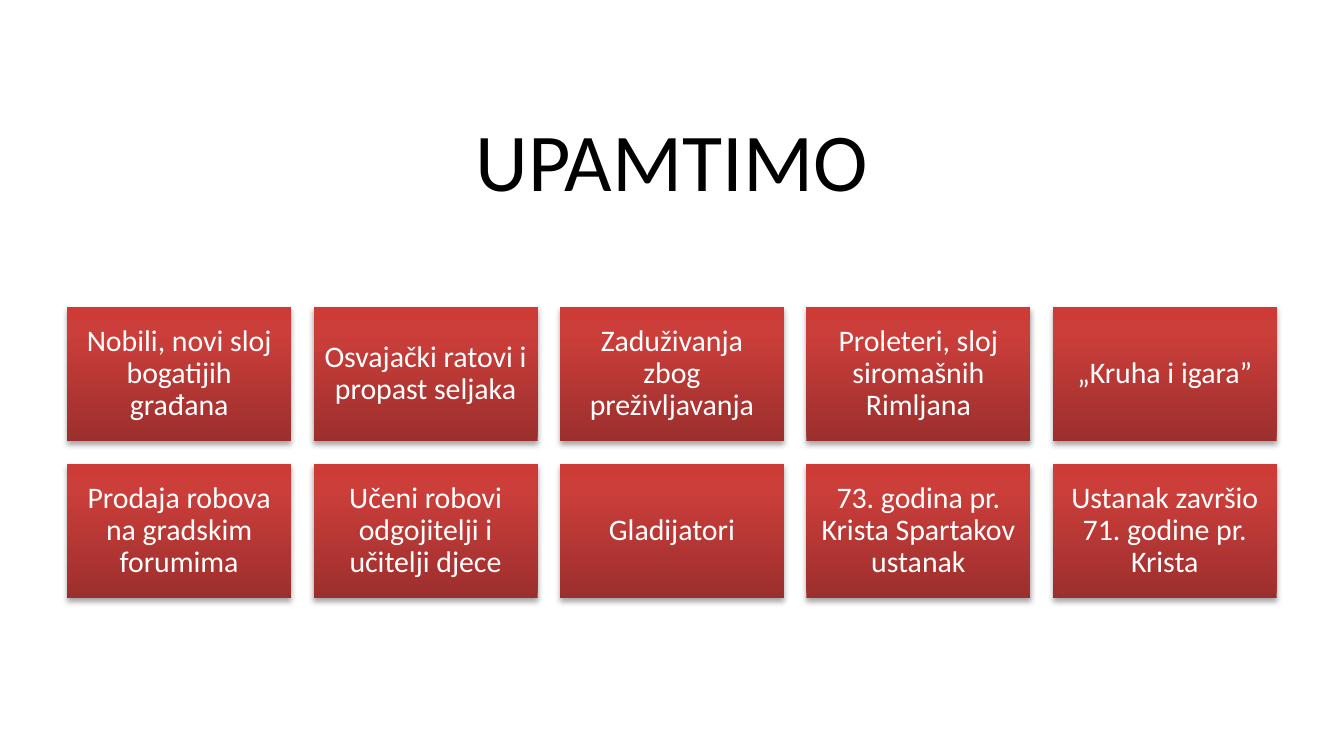
from copy import deepcopy

from lxml import etree
from pptx import Presentation
from pptx.dml.color import RGBColor
from pptx.enum import shapes, text
from pptx.oxml import ns
from pptx.util import Pt

BLACK = RGBColor(0x00, 0x00, 0x00)
WHITE = RGBColor(0xFF, 0xFF, 0xFF)
DARK_RED = RGBColor(0x9C, 0x2F, 0x2D)
RED = RGBColor(0xCB, 0x3E, 0x3A)
BRIGHT_RED = RGBColor(0xCE, 0x3B, 0x37)
CARD_GRADIENT = [(0, DARK_RED), (0.8, RED), (1, BRIGHT_RED)]

FONT = "Calibri"
LEFT, TOP = 36, 164.4
CARD_WIDTH, CARD_HEIGHT, GAP = 120, 72, 12
COLUMNS = 5

FACTS = [
    "Nobili, novi sloj bogatijih građana",
    "Osvajački ratovi i propast seljaka",
    "Zaduživanja zbog preživljavanja",
    "Proleteri, sloj siromašnih Rimljana",
    "„Kruha i igara”",
    "Prodaja robova na gradskim forumima",
    "Učeni robovi odgojitelji i učitelji djece",
    "Gladijatori",
    "73. godina pr. Krista Spartakov ustanak",
    "Ustanak završio 71. godine pr. Krista",
]


def write_text(shape, content, size, color):
    frame = shape.text_frame
    frame.word_wrap = True
    frame.vertical_anchor = text.MSO_ANCHOR.MIDDLE
    paragraph = frame.paragraphs[0]
    paragraph.alignment = text.PP_ALIGN.CENTER
    paragraph.line_spacing = 0.9
    run = paragraph.add_run()
    run.text = content
    run.font.name = FONT
    run.font.size = Pt(size)
    run.font.color.rgb = color


def fill_gradient(shape):
    shape.fill.gradient()
    shape.fill.gradient_angle = 90
    stop_list = shape._element.spPr.find(".//" + ns.qn("a:gsLst"))
    stop_list.append(deepcopy(stop_list[0]))
    for stop, (position, color) in zip(shape.fill.gradient_stops, CARD_GRADIENT):
        stop.position = position
        stop.color.rgb = color


def add_shadow(shape):
    shape.shadow.inherit = False
    effects = shape._element.spPr.find(ns.qn("a:effectLst"))
    shadow = etree.SubElement(
        effects, ns.qn("a:outerShdw"), blurRad=str(Pt(3.1)),
        dist=str(Pt(1.8)), dir="5400000", rotWithShape="0")
    color = etree.SubElement(shadow, ns.qn("a:srgbClr"), val=str(BLACK))
    etree.SubElement(color, ns.qn("a:alpha"), val="35000")


def add_title(slide, content):
    title = slide.shapes.title
    title.left, title.top, title.width, title.height = Pt(36), Pt(60.5), Pt(648), Pt(56)
    write_text(title, content, 44, BLACK)


def add_card(slide, index, content):
    row, column = divmod(index, COLUMNS)
    card = slide.shapes.add_shape(
        shapes.MSO_SHAPE.RECTANGLE,
        Pt(LEFT + column * (CARD_WIDTH + GAP)),
        Pt(TOP + row * (CARD_HEIGHT + GAP)),
        Pt(CARD_WIDTH), Pt(CARD_HEIGHT))
    fill_gradient(card)
    card.line.fill.background()
    add_shadow(card)
    frame = card.text_frame
    frame.margin_left = frame.margin_right = Pt(4.8)
    frame.margin_top = frame.margin_bottom = Pt(4.8)
    write_text(card, content, 16, WHITE)


def main():
    presentation = Presentation()
    presentation.slide_width, presentation.slide_height = Pt(720), Pt(405)
    slide = presentation.slides.add_slide(presentation.slide_layouts[5])
    add_title(slide, "UPAMTIMO")
    for index, fact in enumerate(FACTS):
        add_card(slide, index, fact)
    presentation.save("out.pptx")


if __name__ == "__main__":
    main()
